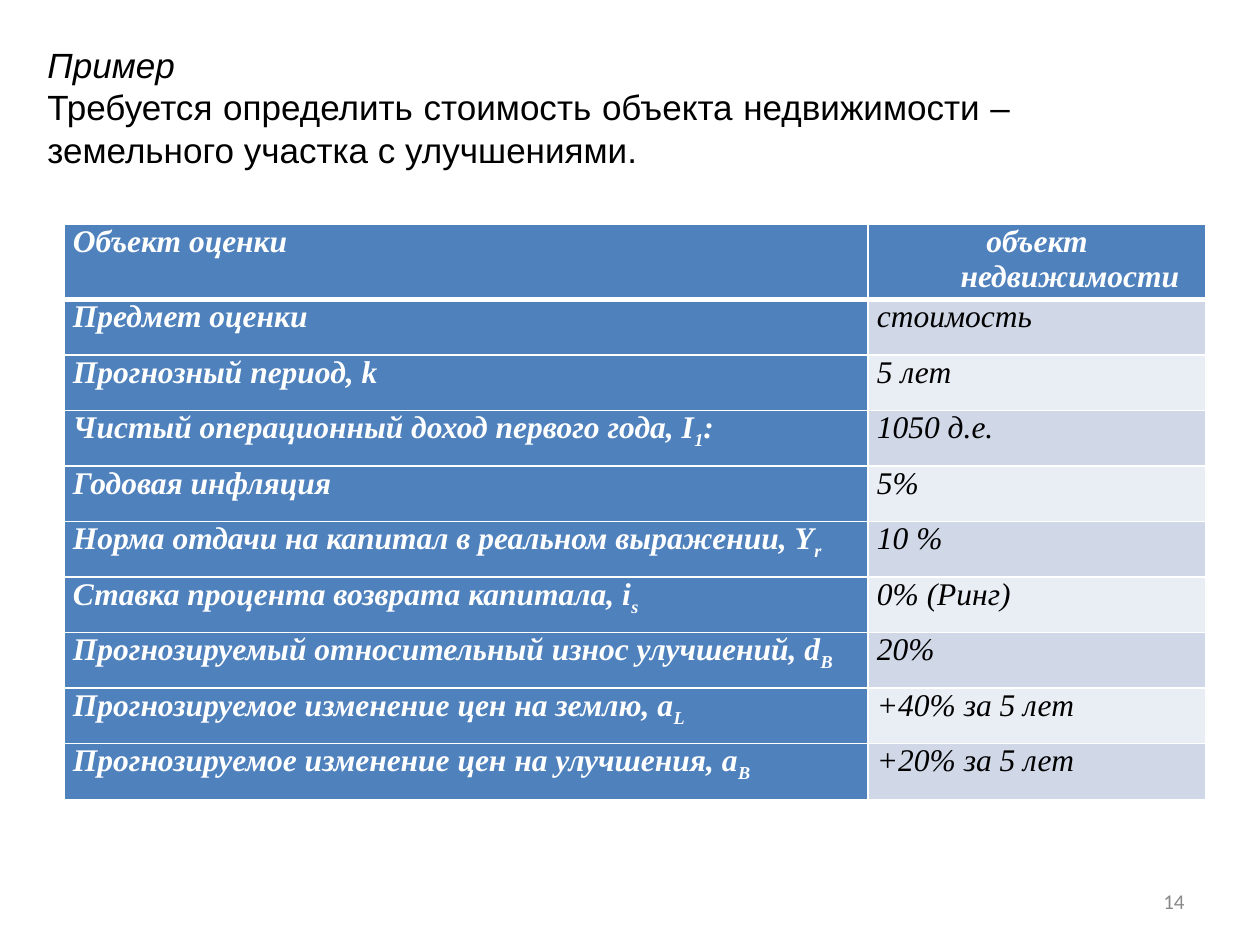
from lxml import etree
from pptx import Presentation
from pptx import util as u
from pptx.dml.color import RGBColor
from pptx.enum import text
from pptx.oxml import ns

PX = u.Inches(1) / 126
WHITE = RGBColor(0xFF, 0xFF, 0xFF)
BLACK = RGBColor(0, 0, 0)
GREY = RGBColor(0x89, 0x89, 0x89)
BLUE = RGBColor(0x4F, 0x81, 0xBD)
BANDS = [RGBColor(0xD0, 0xD8, 0xE8), RGBColor(0xE9, 0xED, 0xF4)]
ALIGN = text.PP_ALIGN


def px(length):
    return u.Emu(round(length * PX))


def write(para, content, font, size, color, align, bold=False, italic=False, hang=0):
    para.alignment = align
    if hang:
        properties = para._p.get_or_add_pPr()
        properties.set("marL", str(px(hang)))
        properties.set("indent", str(px(-hang)))
    for index, part in enumerate(content.split("|")):
        span = para.add_run()
        span.text = part
        span.font.name = font
        span.font.size = u.Pt(size)
        span.font.color.rgb = color
        span.font.bold = bold
        span.font.italic = italic
        if index % 2:
            span._r.get_or_add_rPr().set("baseline", "-25000")


deck = Presentation()
deck.slide_width, deck.slide_height = u.Inches(10), u.Inches(7.5)
page = deck.slides.add_slide(deck.slide_layouts[6])

boxes = [
    ((903, 876, 294, 50), [("14", False)], "Calibri", 12, GREY, ALIGN.RIGHT),
    ((35, 37, 988, 140), [
        ("Пример", True),
        ("Требуется определить стоимость объекта недвижимости – земельного участка с улучшениями.", False),
    ], "Arial", 20, BLACK, ALIGN.JUSTIFY),
]
for place, lines, font, size, color, align in boxes:
    frame = page.shapes.add_textbox(*map(px, place)).text_frame
    frame.word_wrap = True
    frame.vertical_anchor = text.MSO_ANCHOR.MIDDLE
    for index, (line, italic) in enumerate(lines):
        para = frame.add_paragraph() if index else frame.paragraphs[0]
        write(para, line, font, size, color, align, italic=italic)

rows = [
    ("Объект оценки", "объект недвижимости"),
    ("Предмет оценки", "стоимость"),
    ("Прогнозный период, k", "5 лет"),
    ("Чистый операционный доход первого года, I|1|:", "1050 д.е."),
    ("Годовая инфляция", "5%"),
    ("Норма отдачи на капитал в реальном выражении, Y|r", "10 %"),
    ("Ставка процента возврата капитала, i|s", "0% (Ринг)"),
    ("Прогнозируемый относительный износ улучшений, d|B", "20%"),
    ("Прогнозируемое изменение цен на землю, a|L", "+40% за 5 лет"),
    ("Прогнозируемое изменение цен на улучшения, a|B", "+20% за 5 лет"),
]
HEADER_HEIGHT, BODY_HEIGHT = 70, 500
table = page.shapes.add_table(
    len(rows), 2, px(64), px(224), px(1142), px(HEADER_HEIGHT + BODY_HEIGHT)
).table
table.first_col = True
for column, width in zip(table.columns, (804, 338)):
    column.width = px(width)

for row_index, row in enumerate(rows):
    header = row_index == 0
    table.rows[row_index].height = px(HEADER_HEIGHT if header else BODY_HEIGHT / (len(rows) - 1))
    for column_index, content in enumerate(row):
        cell = table.cell(row_index, column_index)
        cell.margin_left = cell.margin_right = px(9)
        cell.margin_top = cell.margin_bottom = 0
        label = header or column_index == 0
        if column_index == 0:
            align = ALIGN.JUSTIFY
        else:
            align = ALIGN.CENTER if header else ALIGN.LEFT
        write(cell.text_frame.paragraphs[0], content, "Times New Roman", 18,
              WHITE if label else BLACK, align, bold=label, italic=True,
              hang=66 if header and column_index else 0)
        properties = cell._tc.get_or_add_tcPr()
        for side in ("L", "R", "T", "B"):
            thick = (row_index, side) in ((0, "B"), (1, "T"))
            border = etree.SubElement(properties, ns.qn(f"a:ln{side}"), w=str(u.Pt(3 if thick else 1)))
            fill = etree.SubElement(border, ns.qn("a:solidFill"))
            etree.SubElement(fill, ns.qn("a:srgbClr"), val=str(WHITE))
        cell.fill.solid()
        cell.fill.fore_color.rgb = BLUE if label else BANDS[(row_index - 1) % 2]

deck.save("out.pptx")
